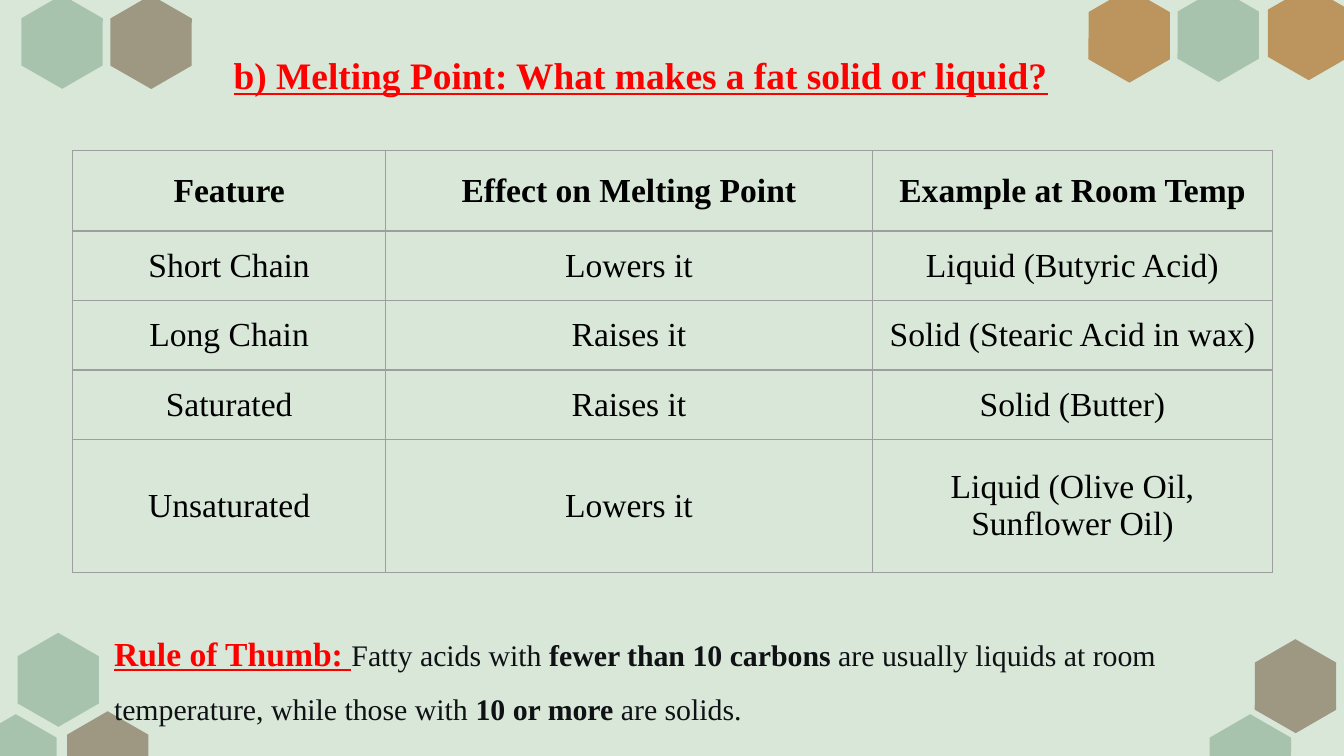
from dataclasses import dataclass

from lxml.etree import SubElement
from pptx import Presentation
from pptx.dml.color import RGBColor
from pptx.enum.shapes import MSO_SHAPE as Shape
from pptx.enum.text import MSO_ANCHOR as Anchor, PP_ALIGN as Align
from pptx.oxml import parse_xml
from pptx.oxml.ns import nsdecls, qn
from pptx.util import Pt


@dataclass(frozen=True)
class Theme:
    font: str = "Times New Roman"
    background: str = "D8E7D8"
    green: tuple = ("004717", 22)
    brown: tuple = ("6D563C", 54)
    gold: tuple = ("BB945E", 100)
    accent: str = "FF0000"
    ink: str = "000000"
    body: str = "0F1115"
    grid: str = "9E9E9E"
    title_size: int = 20
    table_size: int = 18
    body_size: int = 16


THEME = Theme()
HEXAGON_WIDTH, HEXAGON_HEIGHT = 50.4, 43.7
HEXAGON_CENTRES = (
    (THEME.green, ((652.6, 18.8), (8.5, 407.8), (33.2, 22.4), (31.2, 364.2), (669.8, 407.8))),
    (THEME.brown, ((80.9, 22.5), (57.7, 406.2), (694, 367.6))),
    (THEME.gold, ((701, 17.8), (604.9, 19.1))),
)
COLUMN_WIDTHS = (167.8, 260.6, 214.6)
ROW_HEIGHTS = (43.2, 37.2, 37.2, 37.2, 71.3)
MELTING_POINTS = (
    ("Feature", "Effect on Melting Point", "Example at Room Temp"),
    ("Short Chain", "Lowers it", "Liquid (Butyric Acid)"),
    ("Long Chain", "Raises it", "Solid (Stearic Acid in wax)"),
    ("Saturated", "Raises it", "Solid (Butter)"),
    ("Unsaturated", "Lowers it", "Liquid (Olive Oil, Sunflower Oil)"),
)


def add_run(paragraph, text, size, color, bold=False, underline=False):
    """Append one formatted run to a paragraph."""
    run = paragraph.add_run()
    run.text = text
    run.font.name = THEME.font
    run.font.size = Pt(size)
    run.font.bold = bold
    run.font.underline = underline
    run.font.color.rgb = RGBColor.from_string(color)


def add_hexagon(slide, centre, tint):
    """Draw a pointed-top hexagon around its centre."""
    x, y = centre
    color, opacity = tint
    hexagon = slide.shapes.add_shape(
        Shape.HEXAGON, Pt(x - HEXAGON_WIDTH / 2), Pt(y - HEXAGON_HEIGHT / 2),
        Pt(HEXAGON_WIDTH), Pt(HEXAGON_HEIGHT))
    hexagon.adjustments[0] = 0.29
    hexagon.rotation = 150
    hexagon.shadow.inherit = False
    hexagon.line.fill.background()
    hexagon.fill.solid()
    hexagon.fill.fore_color.rgb = RGBColor.from_string(color)
    if opacity < 100:
        rgb = hexagon.fill._xPr.find(f".//{qn('a:srgbClr')}")
        SubElement(rgb, qn("a:alpha")).set("val", str(opacity * 1000))


def add_text(slide, left, top, width, height, runs, spacing=1.0, top_inset=3.6):
    """Add a wrapped text box holding one paragraph of runs."""
    frame = slide.shapes.add_textbox(Pt(left), Pt(top), Pt(width), Pt(height)).text_frame
    frame.word_wrap = True
    frame.margin_top = Pt(top_inset)
    paragraph = frame.paragraphs[0]
    paragraph.line_spacing = spacing
    for run in runs:
        add_run(paragraph, *run)


def set_borders(cell):
    """Give all four sides of a cell the grid line."""
    properties = cell._tc.get_or_add_tcPr()
    for position, side in enumerate("LRTB"):
        properties.insert(position, parse_xml(
            f'<a:ln{side} {nsdecls("a")} w="{Pt(0.75)}"><a:solidFill>'
            f'<a:srgbClr val="{THEME.grid}"/></a:solidFill></a:ln{side}>'))


def add_melting_table(slide):
    """Add the table of features and their effect on melting point."""
    table = slide.shapes.add_table(
        len(ROW_HEIGHTS), len(COLUMN_WIDTHS), Pt(38.9), Pt(80.6),
        Pt(sum(COLUMN_WIDTHS)), Pt(sum(ROW_HEIGHTS))).table
    table.horz_banding = False
    table.first_row = False
    for column, width in zip(table.columns, COLUMN_WIDTHS):
        column.width = Pt(width)
    for index, (row, height, texts) in enumerate(
            zip(table.rows, ROW_HEIGHTS, MELTING_POINTS)):
        row.height = Pt(height)
        for cell, text in zip(row.cells, texts):
            cell.fill.background()
            set_borders(cell)
            cell.vertical_anchor = Anchor.MIDDLE
            cell.margin_left = cell.margin_right = Pt(7.5)
            cell.margin_top = cell.margin_bottom = Pt(5)
            paragraph = cell.text_frame.paragraphs[0]
            paragraph.alignment = Align.CENTER
            add_run(paragraph, text, THEME.table_size, THEME.ink, bold=index == 0)


def main():
    """Build and save the melting point slide."""
    deck = Presentation()
    deck.slide_width, deck.slide_height = Pt(720), Pt(405)
    slide = deck.slides.add_slide(deck.slide_layouts[6])
    slide.background.fill.solid()
    slide.background.fill.fore_color.rgb = RGBColor.from_string(THEME.background)
    for tint, centres in HEXAGON_CENTRES:
        for centre in centres:
            add_hexagon(slide, centre, tint)
    add_text(slide, 118.1, 18.7, 460.1, 45.4, [
        ("b) Melting Point: What makes a fat solid or liquid?",
         THEME.title_size, THEME.accent, True, True)], top_inset=9.5)
    add_melting_table(slide)
    body = (THEME.body_size, THEME.body)
    add_text(slide, 54, 324.7, 627.1, 65.5, [
        ("Rule of Thumb:", THEME.table_size, THEME.accent, True, True),
        (" ", THEME.table_size, THEME.accent, False, True),
        ("Fatty acids with ", *body),
        ("fewer than 10 carbons", *body, True),
        (" are usually liquids at room temperature, while those with ", *body),
        ("10 or more", *body, True),
        (" are solids.", *body)], spacing=1.5)
    deck.save("out.pptx")


if __name__ == "__main__":
    main()
